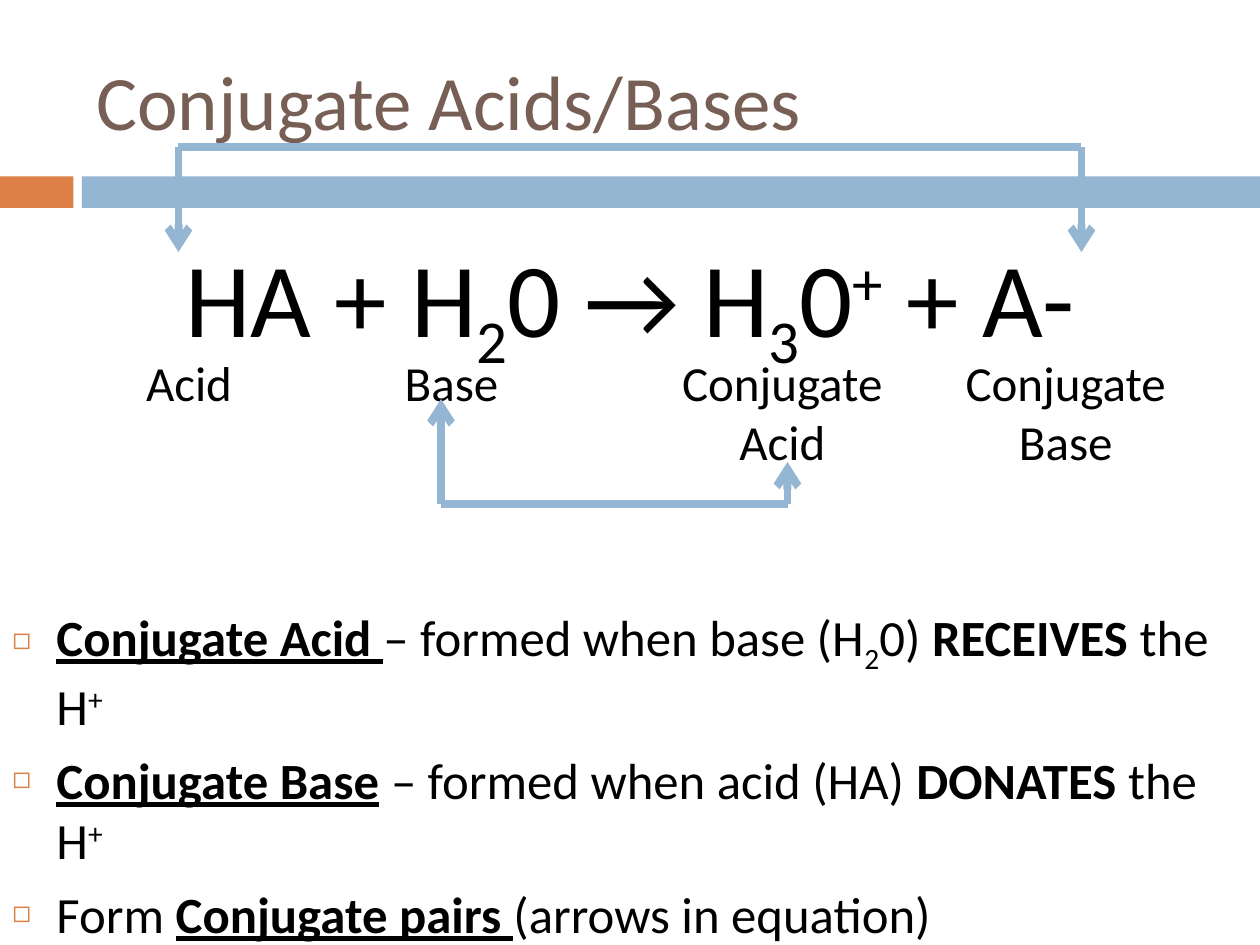
from lxml import etree
from pptx import Presentation, util as u
from pptx.dml import color
from pptx.enum import shapes, text
from pptx.oxml import ns

WIDE, HIGH = 10, 7.5
COLS, ROWS = 120, 90
BLUE, RUST, BROWN, BLACK = "94B6D2", "DD8047", "775F55", "000000"
FONT = "Calibri"
SHIFT = {"sub": "-25000", "sup": "30000"}


def hue(code):
    return color.RGBColor.from_string(code)


def across(col):
    return u.Inches(WIDE * col / COLS)


def down(row):
    return u.Inches(HIGH * row / ROWS)


def node(root, tag, **attrs):
    return etree.SubElement(root, ns.qn(tag), attrs)


def band(slide, left, wide):
    bar = slide.shapes.add_shape(
        shapes.MSO_SHAPE.RECTANGLE, across(left), down(16.8), across(wide), down(3))
    bar.shadow.inherit = False
    bar.line.fill.background()
    bar.fill.solid()
    return bar.fill.fore_color


def box(slide, left, top, wide, high, pad=0.05):
    frame = slide.shapes.add_textbox(
        across(left), down(top), across(wide), down(high)).text_frame
    frame.word_wrap = True
    frame.margin_top = frame.margin_bottom = u.Inches(pad)
    return frame


def write(para, runs, size, tint=BLACK):
    for words, *marks in runs:
        run = para.add_run()
        run.text = words
        font = run.font
        font.name, font.size = FONT, u.Pt(size)
        font.color.rgb = hue(tint)
        font.bold = "bold" in marks
        font.underline = "line" in marks
        for mark in marks:
            if mark in SHIFT:
                font._element.set("baseline", SHIFT[mark])


def label(slide, left, wide, high, words):
    para = box(slide, left, 33, wide, high).paragraphs[0]
    para.alignment = text.PP_ALIGN.CENTER
    write(para, [(words,)], 28)


def bullet(para):
    props = para._p.get_or_add_pPr()
    dent = u.Inches(0.35)
    props.set("marL", str(dent))
    props.set("indent", str(-dent))
    node(node(props, "a:buClr"), "a:srgbClr", val=RUST)
    node(props, "a:buSzPct", val="60000")
    node(props, "a:buFont", typeface=FONT)
    node(props, "a:buChar", char="◻")


def points(slide, items):
    frame = box(slide, 0, 57.7, COLS, 32, 0)
    for rank, runs in enumerate(items):
        para = frame.add_paragraph() if rank else frame.paragraphs[0]
        para.space_before = u.Pt(7 if rank else 0)
        bullet(para)
        write(para, runs, 29)


def stroke(slide, start, end, head=False):
    line = slide.shapes.add_connector(
        shapes.MSO_CONNECTOR.STRAIGHT,
        across(start[0]), down(start[1]), across(end[0]), down(end[1]))
    line.line.color.rgb = hue(BLUE)
    line.line.width = u.Pt(4.5)
    if head:
        node(line.line._get_or_add_ln(), "a:tailEnd", type="arrow")
    node(line._element.spPr, "a:effectLst")


def link(slide, bar, left, right):
    stroke(slide, (left[0], bar), (right[0], bar))
    for tip in (left, right):
        stroke(slide, (tip[0], bar), tip, True)


def main():
    deck = Presentation()
    deck.slide_width, deck.slide_height = u.Inches(WIDE), u.Inches(HIGH)
    slide = deck.slides.add_slide(deck.slide_layouts[6])

    band(slide, 0, 7).rgb = hue(RUST)
    band(slide, 7.8, COLS - 7.8).rgb = hue(BLUE)

    title = box(slide, 8, 3, 107, 13)
    title.vertical_anchor = text.MSO_ANCHOR.MIDDLE
    write(title.paragraphs[0], [("Conjugate Acids/Bases",)], 44, BROWN)

    sum_line = box(slide, 0, 22.1, COLS, 13, 0).paragraphs[0]
    sum_line.alignment = text.PP_ALIGN.CENTER
    write(sum_line, [("HA + H",), ("2", "sub"), ("0 → H",), ("3", "sub"),
                     ("0",), ("+", "sup"), (" + A-",)], 60)

    points(slide, [
        [("Conjugate Acid ", "bold", "line"), ("– formed when base (H",),
         ("2", "sub"), ("0) ",), ("RECEIVES", "bold"), (" the H",), ("+", "sup")],
        [("Conjugate Base", "bold", "line"), (" – formed when acid (HA) ",),
         ("DONATES", "bold"), (" the H",), ("+", "sup")],
        [("Form ",), ("Conjugate pairs ", "bold", "line"),
         ("(arrows in equation)",)],
    ])

    for left, wide, high, words in (
            (8, 20, 6.8, "Acid"), (33, 20, 6.8, "Base"),
            (61, 27, 12.5, "Conjugate Acid"), (87, 29, 12.5, "Conjugate Base")):
        label(slide, left, wide, high, words)

    link(slide, 48, (42, 38), (75, 44))
    link(slide, 14, (17, 24), (103, 24))
    deck.save("out.pptx")


if __name__ == "__main__":
    main()
